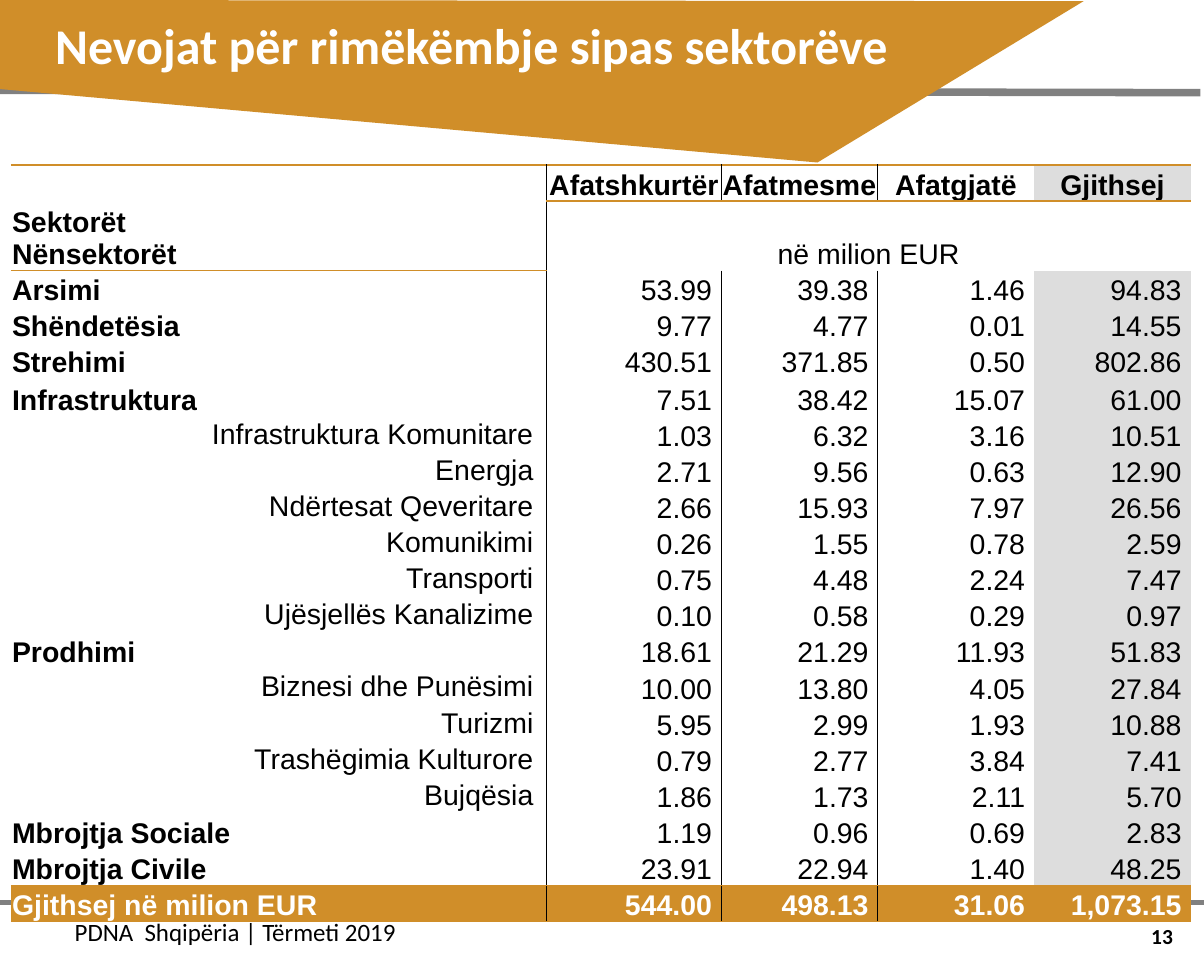
from lxml import etree
from pptx import Presentation
from pptx import util as u
from pptx.dml import color
from pptx.enum import shapes, text
from pptx.oxml import ns

# Content
TITLE = "Nevojat për rimëkëmbje sipas sektorëve"
FOOTER = "PDNA  Shqipëria | Tërmeti 2019"
NUMBER = "13"
CORNER = ["Sektorët", "Nënsektorët"]
HEADS = ["Afatshkurtër", "Afatmesme", "Afatgjatë", "Gjithsej"]
UNIT = "në milion EUR"
MAIN, SUB, TOTAL = "main", "sub", "total"
ROWS = [
    (MAIN, "Arsimi", "53.99", "39.38", "1.46", "94.83"),
    (MAIN, "Shëndetësia", "9.77", "4.77", "0.01", "14.55"),
    (MAIN, "Strehimi", "430.51", "371.85", "0.50", "802.86"),
    (MAIN, "Infrastruktura", "7.51", "38.42", "15.07", "61.00"),
    (SUB, "Infrastruktura Komunitare", "1.03", "6.32", "3.16", "10.51"),
    (SUB, "Energja", "2.71", "9.56", "0.63", "12.90"),
    (SUB, "Ndërtesat Qeveritare", "2.66", "15.93", "7.97", "26.56"),
    (SUB, "Komunikimi", "0.26", "1.55", "0.78", "2.59"),
    (SUB, "Transporti", "0.75", "4.48", "2.24", "7.47"),
    (SUB, "Ujësjellës Kanalizime", "0.10", "0.58", "0.29", "0.97"),
    (MAIN, "Prodhimi", "18.61", "21.29", "11.93", "51.83"),
    (SUB, "Biznesi dhe Punësimi", "10.00", "13.80", "4.05", "27.84"),
    (SUB, "Turizmi", "5.95", "2.99", "1.93", "10.88"),
    (SUB, "Trashëgimia Kulturore", "0.79", "2.77", "3.84", "7.41"),
    (SUB, "Bujqësia", "1.86", "1.73", "2.11", "5.70"),
    (MAIN, "Mbrojtja Sociale", "1.19", "0.96", "0.69", "2.83"),
    (MAIN, "Mbrojtja Civile", "23.91", "22.94", "1.40", "48.25"),
    (TOTAL, "Gjithsej në milion EUR", "544.00", "498.13", "31.06", "1,073.15"),
]
COLS = [4.45, 1.45, 1.3, 1.3, 1.3]
ROW_H = 0.3
BAND = [(0, 0), (0, 0.74), (6.79, 1.35), (9, 0.01)]
GOLD, GRAY, PALE, BLACK, WHITE = "D08E29", "808080", "DDDDDD", "000000", "FFFFFF"
LEFT, MID, RIGHT = text.PP_ALIGN.LEFT, text.PP_ALIGN.CENTER, text.PP_ALIGN.RIGHT
NO_GRID = "{2D5ABB26-0587-4C30-8999-92F81FD0307C}"


def rgb(code):
    return color.RGBColor.from_string(code)


def paint(obj, code):
    obj.fill.solid()
    obj.fill.fore_color.rgb = rgb(code)


def write(frame, lines, size, font, ink, bold=False, align=LEFT):
    for i, line in enumerate(lines):
        para = frame.add_paragraph() if i else frame.paragraphs[0]
        para.alignment = align
        run = para.add_run()
        run.text = line
        run.font.size, run.font.name, run.font.bold = u.Pt(size), font, bold
        run.font.color.rgb = rgb(ink)


def rule(slide, x1, y1, x2, y2, width):
    line = slide.shapes.add_connector(
        shapes.MSO_CONNECTOR.STRAIGHT, *map(u.Inches, (x1, y1, x2, y2)))
    line.line.color.rgb = rgb(GRAY)
    line.line.width = u.Pt(width)
    etree.SubElement(line.element.spPr, ns.qn("a:effectLst"))


def label(slide, box, words, size, ink, bold=False, align=LEFT):
    shape = slide.shapes.add_textbox(*map(u.Inches, box))
    frame = shape.text_frame
    frame.word_wrap = True
    frame.vertical_anchor = text.MSO_ANCHOR.MIDDLE
    write(frame, [words], size, "Calibri", ink, bold, align)
    return frame


def edge(cell, sides):
    """Draw 1 pt borders; sides maps L, R, T, B to a colour."""
    props = cell._tc.get_or_add_tcPr()
    for side in "LRTB":
        if side in sides:
            line = etree.SubElement(props, ns.qn("a:ln" + side), w=str(u.Pt(1)))
            fill = etree.SubElement(line, ns.qn("a:solidFill"))
            etree.SubElement(fill, ns.qn("a:srgbClr"), val=sides[side])


def put(cell, lines, sides, bold=False, align=LEFT, ink=BLACK, fill=None, sub=False):
    edge(cell, sides)
    if fill:
        paint(cell, fill)
    else:
        cell.fill.background()
    side = u.Inches(0.11 if sub else 0.01)
    cell.margin_left = cell.margin_right = side
    cell.margin_top = u.Inches(0 if sub else 0.01)
    cell.margin_bottom = 0
    cell.vertical_anchor = text.MSO_ANCHOR.MIDDLE if sub else text.MSO_ANCHOR.BOTTOM
    write(cell.text_frame, lines, 17, "Arial", ink, bold, align)


def sides_at(col):
    """Vertical rules stand on both sides of the first value column."""
    return [{"R": BLACK}, {"L": BLACK, "R": BLACK}, {"L": BLACK}, {}, {}][col]


def add_needs(slide):
    count = len(ROWS) + 2
    frame = slide.shapes.add_table(
        count, len(COLS), u.Inches(0.09), u.Inches(1.37),
        u.Inches(sum(COLS)), u.Inches(ROW_H * count))
    grid = frame.table
    grid.first_row = grid.horz_banding = False
    for style in frame.element.iter(ns.qn("a:tableStyleId")):
        style.text = NO_GRID
    for col, width in zip(grid.columns, COLS):
        col.width = u.Inches(width)
    for row in grid.rows:
        row.height = u.Inches(ROW_H)
    grid.rows[5].height = u.Inches(0.31)

    # Two heading rows
    bars = {"T": GOLD, "B": GOLD}
    grid.cell(0, 0).merge(grid.cell(1, 0))
    grid.cell(1, 1).merge(grid.cell(1, 4))
    put(grid.cell(0, 0), CORNER, {**sides_at(0), **bars}, True)
    for c, head in enumerate(HEADS, 1):
        put(grid.cell(0, c), [head], {**sides_at(c), **bars}, True, MID,
            fill=PALE if c == 4 else None)
    put(grid.cell(1, 1), [UNIT], {"L": BLACK}, align=MID)

    # Sector rows and the total
    for r, (kind, name, *values) in enumerate(ROWS, 2):
        last, sub = kind == TOTAL, kind == SUB
        rim = bars if last else {}
        ink = WHITE if last else BLACK
        put(grid.cell(r, 0), [name], {**sides_at(0), **rim}, not sub,
            RIGHT if sub else LEFT, ink, GOLD if last else None, sub)
        for c, value in enumerate(values, 1):
            fill = GOLD if last else PALE if c == 4 else None
            put(grid.cell(r, c), [value + " "], {**sides_at(c), **rim},
                last, RIGHT, ink, fill)


def main():
    deck = Presentation()
    deck.slide_width, deck.slide_height = u.Inches(10), u.Inches(8)
    slide = deck.slides.add_slide(deck.slide_layouts[6])

    # Title band over the upper rule
    rule(slide, 0, 0.75, 9.97, 0.77, 4.5)
    pts = [(u.Inches(x), u.Inches(y)) for x, y in BAND]
    pen = slide.shapes.build_freeform(*pts[0])
    pen.add_line_segments(pts[1:], close=True)
    band = pen.convert_to_shape()
    band.shadow.inherit = False
    paint(band, GOLD)
    band.line.fill.background()

    # Footer, title and page number
    foot = label(slide, (0.37, 7.56, 3.95, 0.41), FOOTER, 14.9, BLACK)
    foot.margin_left, foot.margin_top = u.Inches(0.25), 0
    rule(slide, 0, 7.5, 10, 7.5, 3)
    label(slide, (0.36, 0.01, 8.88, 0.72), TITLE, 29.9, WHITE, True)
    label(slide, (7.59, 7.56, 2.25, 0.43), NUMBER, 12.8, BLACK, True, RIGHT)

    add_needs(slide)
    deck.save("out.pptx")


if __name__ == "__main__":
    main()
